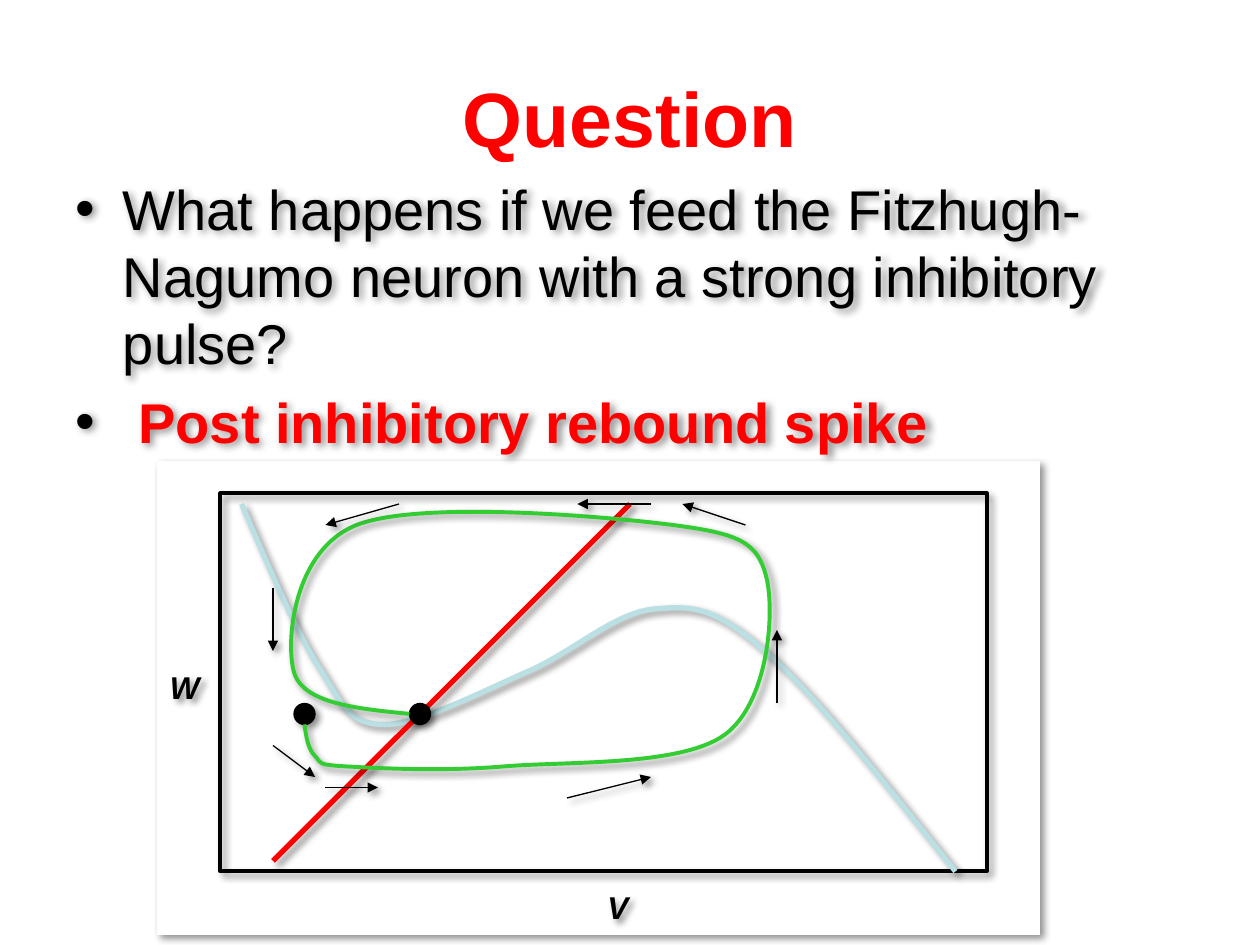
from dataclasses import dataclass
from typing import Any, Optional

import pptx
import pptx.dml.color
import pptx.enum.shapes
import pptx.enum.text
import pptx.oxml
import pptx.oxml.ns
import pptx.util

Pt = pptx.util.Pt
qn = pptx.oxml.ns.qn
SHAPE = pptx.enum.shapes.MSO_SHAPE
AUTO_SIZE = pptx.enum.text.MSO_AUTO_SIZE

COLORS = {
    "black": "000000",
    "white": "FFFFFF",
    "red": "FF0000",
    "cubic": "BBE0E3",
    "orbit": "33CC33",
}
FONT = "Arial"
SHADOW = (
    '<a:effectLst xmlns:a="http://schemas.openxmlformats.org/drawingml/2006/main">'
    f'<a:outerShdw blurRad="{Pt(4)}" dist="{Pt(3)}" dir="2700000" algn="ctr" rotWithShape="0">'
    f'<a:srgbClr val="{COLORS["black"]}"><a:alpha val="43000"/></a:srgbClr>'
    "</a:outerShdw></a:effectLst>"
)


@dataclass
class Box:
    shape: Any
    left: float
    top: float
    width: float
    height: float
    fill: Optional[str]
    line: str
    weight: float = 0.75


@dataclass
class Segment:
    x1: float
    y1: float
    x2: float
    y2: float
    color: str = "black"
    weight: float = 0.75
    arrow: bool = True


@dataclass
class Curve:
    points: list[tuple[float, float]]
    color: str
    weight: float


@dataclass
class Label:
    text: str
    left: float
    top: float
    width: float
    height: float


PANEL = Box(SHAPE.RECTANGLE, 90, 264, 504, 270, "white", "white")
FRAME = Box(SHAPE.RECTANGLE, 126, 282, 438, 216, None, "black", 2.25)
DOTS = [Box(SHAPE.OVAL, x, 402, 12, 12, "black", "black") for x in (234, 168)]
W_NULLCLINE = Segment(360, 288, 156, 492, "red", 3, False)
V_NULLCLINE = Curve([
    (138, 288),
    (154, 325), (170, 363), (184, 384),
    (197, 405), (200, 414), (220, 414),
    (239, 414), (276, 395), (301, 384),
    (327, 373), (351, 350), (374, 348),
    (397, 346), (408, 347), (437, 372),
    (466, 397), (506, 448), (546, 498),
], "cubic", 3)
ORBIT = Curve([
    (174, 414),
    (175, 421), (176, 428), (180, 432),
    (184, 436), (180, 437), (198, 438),
    (216, 439), (252, 441), (288, 438),
    (324, 435), (389, 438), (414, 420),
    (439, 402), (443, 350), (438, 330),
    (433, 310), (423, 305), (384, 300),
    (345, 295), (240, 286), (204, 300),
    (168, 314), (163, 366), (168, 384),
    (173, 402), (204, 405), (234, 408),
], "orbit", 2.25)
LABELS = [Label("V", 340, 504, 27, 29), Label("W", 90, 378, 32, 29)]
FLOW_ARROWS = [
    Segment(444, 402, 444, 360),
    Segment(156, 426, 180, 444),
    Segment(186, 450, 216, 450),
    Segment(324, 456, 372, 444),
    Segment(426, 300, 390, 288),
    Segment(372, 288, 330, 288),
    Segment(228, 288, 186, 300),
    Segment(156, 336, 156, 372),
]


def rgb(name: str) -> pptx.dml.color.RGBColor:
    return pptx.dml.color.RGBColor.from_string(COLORS[name])


def add_shadow(sp: Any) -> None:
    sp._element.spPr.append(pptx.oxml.parse_xml(SHADOW))


def set_line(sp: Any, color: str, weight: float) -> None:
    sp.line.color.rgb = rgb(color)
    sp.line.width = Pt(weight)


def set_font(font: Any, size: float, color: str, bold: bool = False, italic: bool = False) -> None:
    font.name = FONT
    font.size = Pt(size)
    font.color.rgb = rgb(color)
    font.bold = bold
    font.italic = italic


def place(sp: Any, left: float, top: float, width: float, height: float) -> None:
    sp.left, sp.top, sp.width, sp.height = Pt(left), Pt(top), Pt(width), Pt(height)


def draw_box(s: Any, box: Box) -> Any:
    sp = s.shapes.add_shape(box.shape, Pt(box.left), Pt(box.top), Pt(box.width), Pt(box.height))
    if box.fill:
        sp.fill.solid()
        sp.fill.fore_color.rgb = rgb(box.fill)
    else:
        sp.fill.background()
    set_line(sp, box.line, box.weight)
    add_shadow(sp)
    return sp


def draw_segment(s: Any, seg: Segment) -> None:
    sp = s.shapes.add_connector(
        pptx.enum.shapes.MSO_CONNECTOR.STRAIGHT, Pt(seg.x1), Pt(seg.y1), Pt(seg.x2), Pt(seg.y2)
    )
    set_line(sp, seg.color, seg.weight)
    if seg.arrow:
        tail = pptx.oxml.parse_xml(
            '<a:tailEnd xmlns:a="http://schemas.openxmlformats.org/drawingml/2006/main" type="triangle"/>'
        )
        sp.line._get_or_add_ln().append(tail)
    add_shadow(sp)


def draw_curve(s: Any, curve: Curve) -> None:
    start, *rest = curve.points
    builder = s.shapes.build_freeform(*start, scale=Pt(1))
    builder.add_line_segments(rest, close=False)
    sp = builder.convert_to_shape()
    outline = sp._element.spPr.find(".//" + qn("a:path"))
    steps = outline.findall(qn("a:lnTo"))
    for i in range(0, len(steps), 3):
        bezier = outline.makeelement(qn("a:cubicBezTo"), {})
        outline.append(bezier)
        for step in steps[i:i + 3]:
            bezier.append(step[0])
            outline.remove(step)
    sp.fill.background()
    set_line(sp, curve.color, curve.weight)
    add_shadow(sp)


def draw_label(s: Any, label: Label) -> None:
    sp = s.shapes.add_textbox(Pt(label.left), Pt(label.top), Pt(label.width), Pt(label.height))
    tf = sp.text_frame
    tf.word_wrap = False
    tf.auto_size = AUTO_SIZE.SHAPE_TO_FIT_TEXT
    p = tf.paragraphs[0]
    p.text = label.text
    set_font(p.font, 18, "black", bold=True, italic=True)
    add_shadow(sp)


def fill_placeholders(s: Any) -> None:
    title, body = s.shapes.title, s.placeholders[1]
    place(title, 36, 21.6, 648, 90)
    place(body, 36, 96, 648, 357)
    title.text_frame.text = "Question"
    set_font(title.text_frame.paragraphs[0].font, 44, "red", bold=True)

    tf = body.text_frame
    tf.auto_size = AUTO_SIZE.NONE
    question = tf.paragraphs[0]
    question.text = (
        "What happens if we feed the Fitzhugh-Nagumo neuron with a strong inhibitory pulse?"
    )
    set_font(question.font, 32, "black")
    answer = tf.add_paragraph()
    set_font(answer.font, 32, "black")
    answer.add_run().text = " "
    r = answer.add_run()
    r.text = "Post inhibitory rebound spike"
    set_font(r.font, 32, "red", bold=True)
    body.fill.background()
    add_shadow(body)


def main() -> None:
    prs = pptx.Presentation()
    prs.slide_width, prs.slide_height = Pt(720), Pt(540)
    s = prs.slides.add_slide(prs.slide_layouts[1])
    fill_placeholders(s)
    panel = draw_box(s, PANEL)
    s.shapes.title._element.addprevious(panel._element)
    draw_box(s, FRAME)
    draw_curve(s, V_NULLCLINE)
    draw_segment(s, W_NULLCLINE)
    for dot in DOTS:
        draw_box(s, dot)
    draw_curve(s, ORBIT)
    for label in LABELS:
        draw_label(s, label)
    for arrow in FLOW_ARROWS:
        draw_segment(s, arrow)
    prs.save("out.pptx")


if __name__ == "__main__":
    main()
